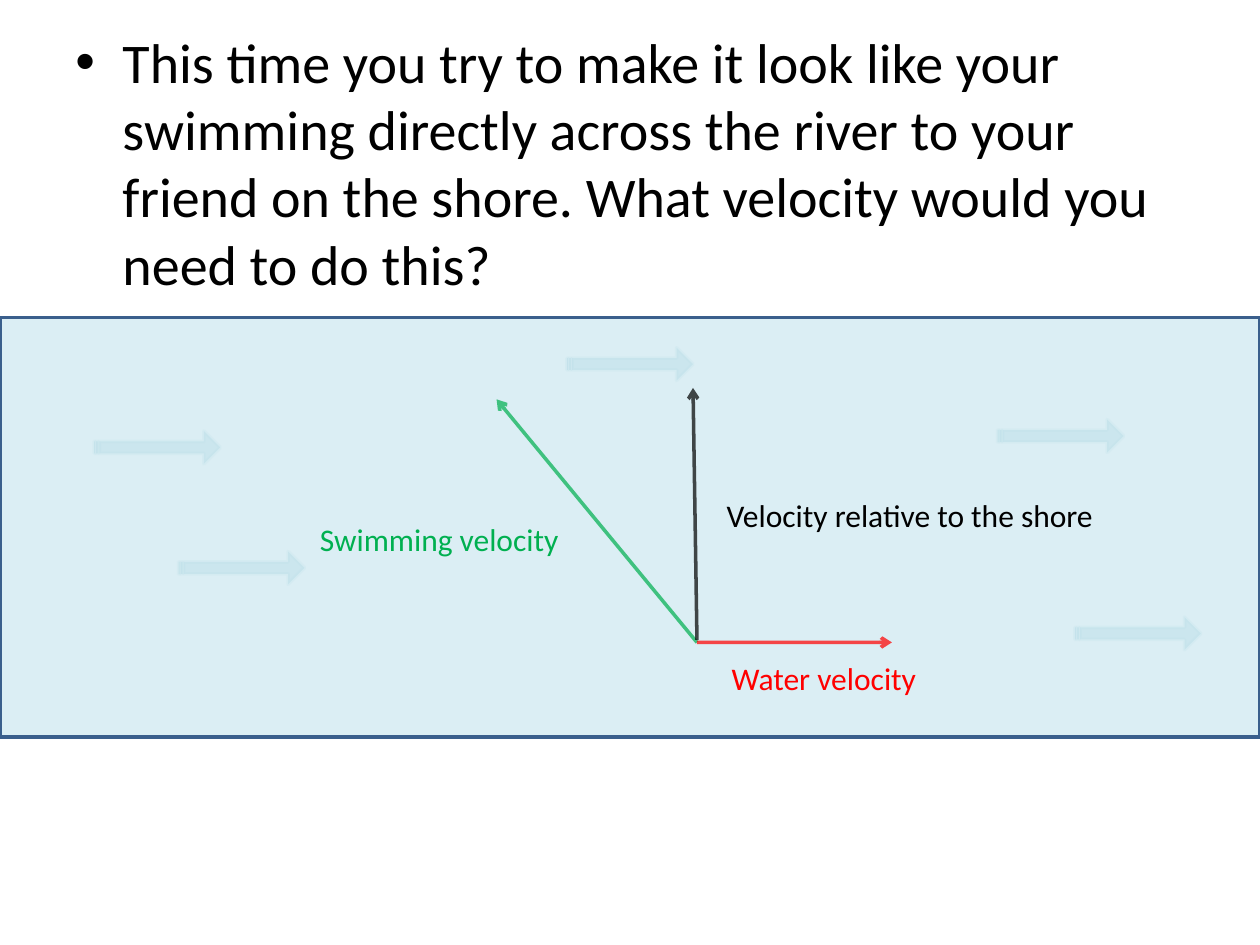
from lxml.etree import SubElement
from pptx import Presentation
from pptx.dml.color import RGBColor
from pptx.enum.shapes import MSO_CONNECTOR, MSO_SHAPE
from pptx.enum.text import MSO_AUTO_SIZE
from pptx.oxml.ns import qn
from pptx.util import Cm, Pt

COLORS = {
    "text": "000000",
    "river": "DBEEF4",
    "bank": "3A5F8C",
    "current": "B7DEE8",
    "swimming": "00B050",
    "water": "FF0000",
}


class RiverSlide:
    font = "Calibri"
    line_width = Pt(2)

    def __init__(self, slide):
        self.slide = slide
        self.shapes = slide.shapes

    def color(self, name):
        return RGBColor.from_string(COLORS[name])

    def set_alpha(self, shape, parent, percent):
        """Make the solid fill under parent (spPr or its a:ln) see-through."""
        for color in shape._element.xpath(f".//{parent}/a:solidFill/a:srgbClr"):
            SubElement(color, qn("a:alpha"), val=str(percent * 1000))

    def text(self, words, box, size, color="text", wrap=False):
        frame = self.shapes.add_textbox(*map(Cm, box)).text_frame
        frame.word_wrap = wrap
        frame.auto_size = MSO_AUTO_SIZE.NONE if wrap else MSO_AUTO_SIZE.SHAPE_TO_FIT_TEXT
        paragraph = frame.paragraphs[0]
        run = paragraph.add_run()
        run.text = words
        for name, value in {"name": self.font, "size": Pt(size)}.items():
            setattr(run.font, name, value)
        run.font.color.rgb = self.color(color)
        return paragraph

    def bullet(self, words, box, size):
        paragraph = self.text(words, box, size, wrap=True)
        paragraph.space_before = Pt(size * 0.2)
        properties = paragraph._p.get_or_add_pPr()
        indent = Cm(0.95)
        for name, value in {"marL": indent, "indent": -indent}.items():
            properties.set(name, str(value))
        SubElement(properties, qn("a:buFont"), typeface="Arial")
        SubElement(properties, qn("a:buChar"), char="•")

    def block(self, kind, box, fill, line):
        shape = self.shapes.add_shape(kind, *map(Cm, box))
        shape.shadow.inherit = False
        shape.fill.solid()
        shape.fill.fore_color.rgb = self.color(fill)
        shape.line.color.rgb = self.color(line)
        shape.line.width = self.line_width
        return shape

    def current(self, left, top):
        arrow = self.block(MSO_SHAPE.STRIPED_RIGHT_ARROW, (left, top, 2.54, 0.66),
                           "current", "current")
        arrow.adjustments[0] = 0.361
        arrow.adjustments[1] = 0.5
        self.set_alpha(arrow, "p:spPr", 44)
        self.set_alpha(arrow, "a:ln", 17)

    def velocity(self, start, end, color):
        vector = self.shapes.add_connector(MSO_CONNECTOR.STRAIGHT, *map(Cm, start + end))
        vector.line.color.rgb = self.color(color)
        vector.line.width = self.line_width
        self.set_alpha(vector, "a:ln", 71)
        SubElement(vector.line._get_or_add_ln(), qn("a:tailEnd"), type="arrow")
        SubElement(vector._element.spPr, qn("a:effectLst"))


def main():
    deck = Presentation()
    deck.slide_width, deck.slide_height = Cm(25.4), Cm(19.05)
    page = RiverSlide(deck.slides.add_slide(deck.slide_layouts[6]))

    page.bullet(
        "This time you try to make it look like your swimming directly across the river "
        "to your friend on the shore. What velocity would you need to do this?",
        (1.27, 0.43, 22.86, 5.72), 32)
    page.block(MSO_SHAPE.RECTANGLE, (0, 6.4, 25.4, 8.46), "river", "bank")

    swimmer = (14.05, 12.95)
    page.velocity(swimmer, (10.01, 8.05), "swimming")
    page.velocity(swimmer, (17.98, 12.95), "water")
    page.velocity((14.05, 12.9), (13.97, 7.82), "text")

    for words, left, top, width, color in (
        ("Water velocity", 14.5, 13.16, 4.27, "water"),
        ("Velocity relative to the shore", 14.4, 9.88, 8, "text"),
        ("Swimming velocity", 6.2, 10.36, 5.38, "swimming"),
    ):
        page.text(words, (left, top, width, 1.02), 18, color)

    for left, top in ((1.9, 8.69), (3.6, 11.12), (11.43, 7.01), (21.67, 12.44), (20.11, 8.46)):
        page.current(left, top)

    deck.save("out.pptx")


if __name__ == "__main__":
    main()
